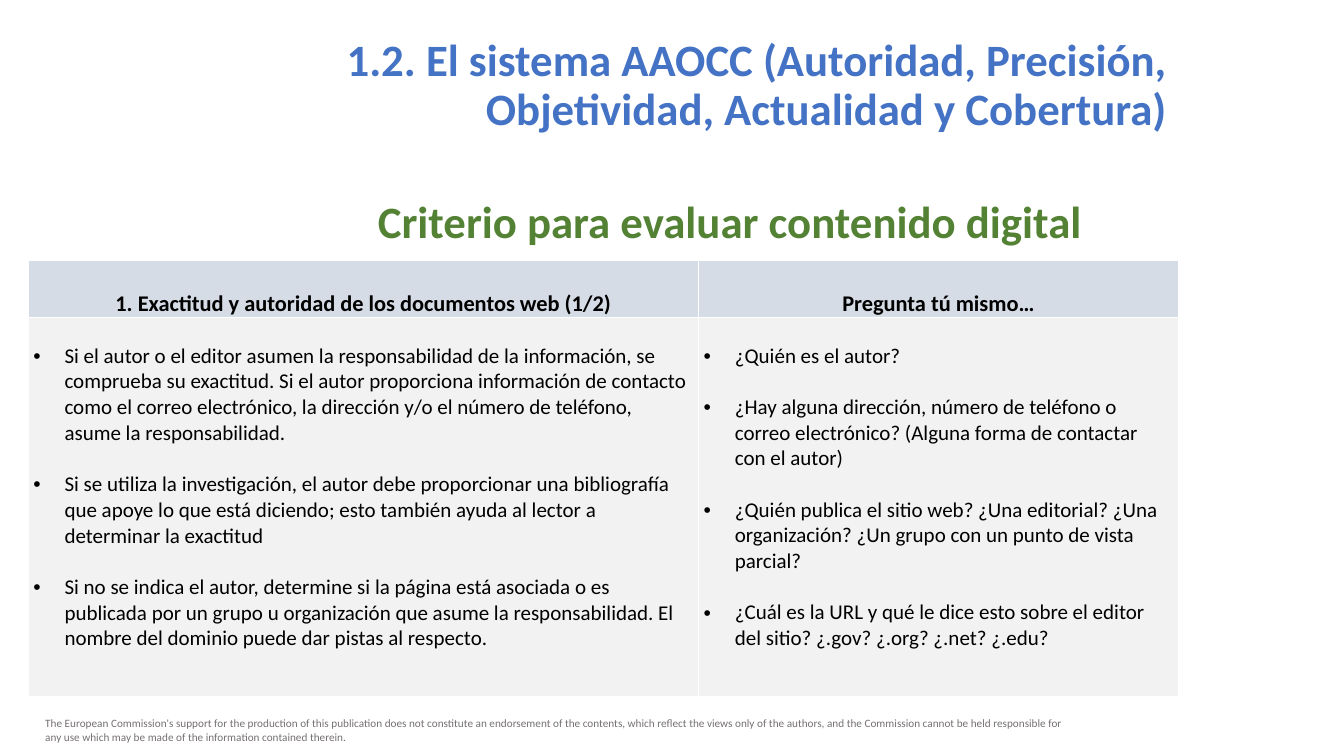
from dataclasses import dataclass

from lxml import etree
from pptx import Presentation
from pptx import util as u
from pptx.dml.color import RGBColor
from pptx.enum import text as t
from pptx.oxml import ns

WIDTH, HEIGHT = u.Inches(13.33), u.Inches(7.5)


@dataclass(frozen=True)
class Theme:
    font: str = "Calibri"
    blue: str = "4472C4"
    green: str = "548235"
    grey: str = "767171"
    black: str = "000000"
    white: str = "FFFFFF"
    header_fill: str = "D6DCE5"
    body_fill: str = "F2F2F2"
    heading_size: float = 32
    header_size: float = 16
    body_size: float = 15
    note_size: float = 8
    blank_line: float = 18.3


THEME = Theme()


@dataclass(frozen=True)
class Area:
    """A rectangle in percent of the slide's width and height."""
    left: float
    top: float
    width: float
    height: float

    def emu(self) -> tuple[int, int, int, int]:
        return across(self.left), down(self.top), across(self.width), down(self.height)


@dataclass(frozen=True)
class TextBlock:
    area: Area
    text: str
    size: float
    color: str
    bold: bool = False
    align: t.PP_ALIGN = t.PP_ALIGN.LEFT
    line_spacing: float = 1.0


@dataclass(frozen=True)
class Criterion:
    header: str
    width: float
    points: tuple[str, ...]


def across(percent: float) -> int:
    return round(WIDTH * percent / 100)


def down(percent: float) -> int:
    return round(HEIGHT * percent / 100)


BLOCKS = (
    TextBlock(
        Area(2.63, 94.13, 78.45, 4.93),
        "The European Commission's support for the production of this publication does not "
        "constitute an endorsement of the contents, which reflect the views only of the authors, "
        "and the Commission cannot be held responsible for any use which may be made of the "
        "information contained therein.",
        THEME.note_size, THEME.grey),
    TextBlock(
        Area(18.45, 4.4, 69.15, 4.13),
        "1.2. El sistema AAOCC (Autoridad, Precisión, Objetividad, Actualidad y Cobertura)",
        THEME.heading_size, THEME.blue, True, t.PP_ALIGN.RIGHT, 0.9),
    TextBlock(
        Area(27.38, 24.93, 60.3, 8.53),
        "Criterio para evaluar contenido digital",
        THEME.heading_size, THEME.green, True),
)

TABLE_LEFT, TABLE_TOP = 2.1, 34.4
ROW_HEIGHTS = (7.6, 50.13)
CRITERIA = (
    Criterion("1. Exactitud y autoridad de los documentos web (1/2)", 49.88, (
        "Si el autor o el editor asumen la responsabilidad de la información, se comprueba su "
        "exactitud. Si el autor proporciona información de contacto como el correo electrónico, "
        "la dirección y/o el número de teléfono, asume la responsabilidad.",
        "Si se utiliza la investigación, el autor debe proporcionar una bibliografía que apoye "
        "lo que está diciendo; esto también ayuda al lector a determinar la exactitud",
        "Si no se indica el autor, determine si la página está asociada o es publicada por un "
        "grupo u organización que asume la responsabilidad. El nombre del dominio puede dar "
        "pistas al respecto.")),
    Criterion("Pregunta tú mismo…", 35.7, (
        "¿Quién es el autor?",
        "¿Hay alguna dirección, número de teléfono o correo electrónico? (Alguna forma de "
        "contactar con el autor)",
        "¿Quién publica el sitio web? ¿Una editorial? ¿Una organización? ¿Un grupo con un punto "
        "de vista parcial?",
        "¿Cuál es la URL y qué le dice esto sobre el editor del sitio? ¿.gov? ¿.org? ¿.net? "
        "¿.edu?")),
)


def write(para, text: str, *, size: float, color: str = THEME.black, bold: bool = False,
          align: t.PP_ALIGN = t.PP_ALIGN.LEFT, line_spacing: float = 1.0,
          space_before: float = 0, bullet: bool = False) -> None:
    if bullet:
        props = para._p.get_or_add_pPr()
        indent = u.Inches(0.31)
        props.set("marL", str(indent))
        props.set("indent", str(-indent))
        etree.SubElement(props, ns.qn("a:buFont"), typeface="Arial")
        etree.SubElement(props, ns.qn("a:buChar"), char="•")
    para.alignment = align
    para.line_spacing = line_spacing
    para.space_before = u.Pt(space_before)
    span = para.add_run()
    span.text = text
    span.font.name = THEME.font
    span.font.size = u.Pt(size)
    span.font.bold = bold
    span.font.color.rgb = RGBColor.from_string(color)


def add_block(page, block: TextBlock) -> None:
    frame = page.shapes.add_textbox(*block.area.emu()).text_frame
    frame.word_wrap = True
    write(frame.paragraphs[0], block.text, size=block.size, color=block.color,
          bold=block.bold, align=block.align, line_spacing=block.line_spacing)


def style_cell(cell, fill: str, anchor: t.MSO_ANCHOR, top: float = 0) -> None:
    cell.margin_left = cell.margin_right = u.Inches(0.05)
    cell.margin_top, cell.margin_bottom = u.Pt(top), 0
    cell.vertical_anchor = anchor
    # Borders come before the fill in the cell properties
    props = cell._tc.get_or_add_tcPr()
    for side in ("lnL", "lnR", "lnT", "lnB"):
        line = etree.SubElement(props, ns.qn(f"a:{side}"), w=str(u.Pt(1)))
        solid = etree.SubElement(line, ns.qn("a:solidFill"))
        etree.SubElement(solid, ns.qn("a:srgbClr"), val=THEME.white)
    cell.fill.solid()
    cell.fill.fore_color.rgb = RGBColor.from_string(fill)


def add_criteria_table(page) -> None:
    area = Area(TABLE_LEFT, TABLE_TOP, sum(c.width for c in CRITERIA), sum(ROW_HEIGHTS))
    table = page.shapes.add_table(len(ROW_HEIGHTS), len(CRITERIA), *area.emu()).table
    table.first_row = table.horz_banding = False
    for row, height in zip(table.rows, ROW_HEIGHTS):
        row.height = down(height)
    for index, criterion in enumerate(CRITERIA):
        table.columns[index].width = across(criterion.width)
        header, body = table.cell(0, index), table.cell(1, index)
        style_cell(header, THEME.header_fill, t.MSO_ANCHOR.BOTTOM)
        write(header.text_frame.paragraphs[0], criterion.header, size=THEME.header_size,
              bold=True, align=t.PP_ALIGN.CENTER)
        style_cell(body, THEME.body_fill, t.MSO_ANCHOR.TOP, top=THEME.blank_line)
        frame = body.text_frame
        for number, point in enumerate(criterion.points):
            para = frame.add_paragraph() if number else frame.paragraphs[0]
            write(para, point, size=THEME.body_size, bullet=True,
                  space_before=THEME.blank_line if number else 0)


def main() -> None:
    deck = Presentation()
    deck.slide_width, deck.slide_height = WIDTH, HEIGHT
    page = deck.slides.add_slide(deck.slide_layouts[6])
    # Footer note and headings
    for block in BLOCKS:
        add_block(page, block)
    # Criteria and questions
    add_criteria_table(page)
    deck.save("out.pptx")


if __name__ == "__main__":
    main()
